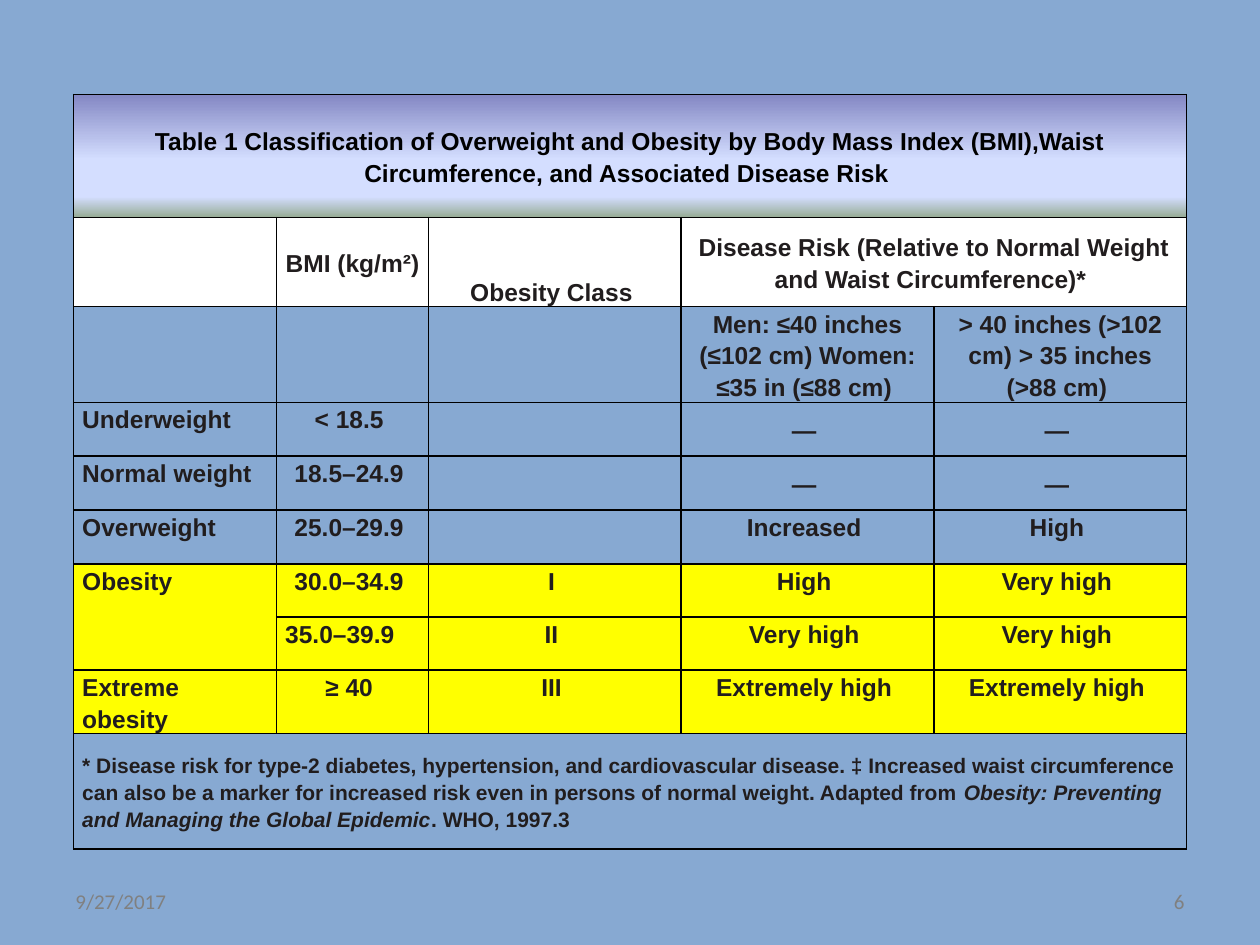
from lxml import etree
from pptx import Presentation
from pptx.dml.color import RGBColor
from pptx.enum import text
from pptx.oxml.ns import qn
from pptx.util import Pt

BLUE, YELLOW, WHITE = "87A9D2", "FFFF00", "FFFFFF"
BLACK, INK, GREY = "000000", "211D1E", "808080"
TITLE_STOPS = [(0, "8488C4"), (53, "D4DEFF"), (83, "D4DEFF"), (100, "96AB94")]

LEFT, CENTER, RIGHT = (text.PP_ALIGN.LEFT, text.PP_ALIGN.CENTER,
                       text.PP_ALIGN.RIGHT)
TOP, MIDDLE, BOTTOM = (text.MSO_ANCHOR.TOP, text.MSO_ANCHOR.MIDDLE,
                       text.MSO_ANCHOR.BOTTOM)

COL_WIDTHS = [116, 86.9, 144.4, 144.4, 144.4]
ROW_HEIGHTS = [70.4, 50.9, 54.6, 30.8, 30.8, 30.8, 30.4, 30.4, 30.4, 66]

TITLE = ("Table 1 Classification of Overweight and Obesity by Body Mass Index "
         "(BMI),Waist Circumference, and Associated Disease Risk ")
HEADINGS = [
    ["", "BMI (kg/m²) ", "Obesity Class ",
     "Disease Risk (Relative to Normal Weight and Waist Circumference)* ", ""],
    ["", "", "", "Men: ≤40 inches (≤102 cm) Women: ≤35 in (≤88 cm) ",
     "> 40 inches (>102 cm) > 35 inches (>88 cm) "],
]
CLASSES = [
    ["Underweight", "< 18.5 ", "", "— ", "— "],
    ["Normal weight", "18.5–24.9 ", "", "— ", "— "],
    ["Overweight", "25.0–29.9 ", "", "Increased ", "High "],
    ["Obesity", "30.0–34.9 ", "I ", "High ", "Very high "],
    ["", "35.0–39.9", "II ", "Very high ", "Very high "],
    ["Extreme obesity", "≥ 40 ", "III ", "Extremely high ", "Extremely high "],
]
NOTE = [
    ("* Disease risk for type-2 diabetes, hypertension, and cardiovascular "
     "disease. ‡ Increased waist circumference can also be a marker for "
     "increased risk even in persons of normal weight. Adapted from ", False),
    ("Obesity: Preventing and Managing the Global Epidemic", True),
    (". WHO, 1997.3", False),
]


def rgb(value):
    return RGBColor.from_string(value)


def add_run(p, content, size=14, color=INK, font="Arial", bold=True,
            italic=False):
    r = p.add_run()
    r.text = content
    r.font.size = Pt(size)
    r.font.bold = bold
    r.font.italic = italic
    r.font.color.rgb = rgb(color)
    if font:
        r.font.name = font


def add_solid(parent, color):
    fill = etree.SubElement(parent, qn("a:solidFill"))
    etree.SubElement(fill, qn("a:srgbClr"), val=color)


def set_borders(cell):
    tc_pr = cell._tc.get_or_add_tcPr()
    for side in "LRTB":
        ln = etree.SubElement(tc_pr, qn(f"a:ln{side}"), w=str(Pt(1)))
        add_solid(ln, BLACK)


def set_gradient(cell, stops):
    grad = etree.SubElement(cell._tc.get_or_add_tcPr(), qn("a:gradFill"))
    gs_list = etree.SubElement(grad, qn("a:gsLst"))
    for pos, color in stops:
        gs = etree.SubElement(gs_list, qn("a:gs"), pos=str(pos * 1000))
        etree.SubElement(gs, qn("a:srgbClr"), val=color)
    etree.SubElement(grad, qn("a:lin"), ang=str(90 * 60000), scaled="0")


def fill_cell(cell, runs, fill=None, align=CENTER, anchor=TOP, **fmt):
    """Write (text, italic) runs into a cell; fill is a colour or stops."""
    cell.margin_left = cell.margin_right = Pt(5)
    cell.margin_top = cell.margin_bottom = 0
    cell.vertical_anchor = anchor
    p = cell.text_frame.paragraphs[0]
    p.alignment = align
    p.line_spacing = 1.15
    for content, italic in runs:
        if content:
            add_run(p, content, italic=italic, **fmt)
    if isinstance(fill, list):
        set_gradient(cell, fill)
    elif fill:
        cell.fill.solid()
        cell.fill.fore_color.rgb = rgb(fill)
    else:
        cell.fill.background()


def add_risk_table(slide):
    frame = slide.shapes.add_table(
        len(ROW_HEIGHTS), len(COL_WIDTHS), Pt(42), Pt(54),
        Pt(sum(COL_WIDTHS)), Pt(sum(ROW_HEIGHTS)))
    table = frame.table
    table.first_row = table.horz_banding = False
    for column, width in zip(table.columns, COL_WIDTHS):
        column.width = Pt(width)
    for row, height in zip(table.rows, ROW_HEIGHTS):
        row.height = Pt(height)
    for cell in table.iter_cells():
        set_borders(cell)

    # Merged areas: title, risk heading, obesity label, footnote
    for first, last in [((0, 0), (0, 4)), ((1, 3), (1, 4)),
                        ((6, 0), (7, 0)), ((9, 0), (9, 4))]:
        table.cell(*first).merge(table.cell(*last))

    # Title and footnote
    fill_cell(table.cell(0, 0), [(TITLE, False)], TITLE_STOPS, anchor=MIDDLE,
              color=BLACK)
    fill_cell(table.cell(9, 0), NOTE, align=LEFT, anchor=MIDDLE, size=12)

    # Headings and weight classes
    for i, values in enumerate(HEADINGS + CLASSES, start=1):
        fill = WHITE if i == 1 else YELLOW if i >= 6 else None
        for j, value in enumerate(values):
            cell = table.cell(i, j)
            if cell.is_spanned:
                continue
            if i == 1:
                anchor = BOTTOM if j == 2 else MIDDLE
            else:
                anchor = MIDDLE if value == "— " else TOP
            left = j == 0 or value == "35.0–39.9"
            fill_cell(cell, [(value, False)], fill,
                      LEFT if left else CENTER, anchor)


def add_footer(slide, content, left, align):
    sp = slide.shapes.add_textbox(Pt(left), Pt(500.5), Pt(168), Pt(28.75))
    tf = sp.text_frame
    tf.word_wrap = True
    tf.vertical_anchor = MIDDLE
    p = tf.paragraphs[0]
    p.alignment = align
    add_run(p, content, size=12, color=GREY, font=None, bold=False)


def main():
    prs = Presentation()
    prs.slide_width, prs.slide_height = Pt(720), Pt(540)
    slide = prs.slides.add_slide(prs.slide_layouts[6])
    slide.background.fill.solid()
    slide.background.fill.fore_color.rgb = rgb(BLUE)

    add_risk_table(slide)

    # Date and slide number
    add_footer(slide, "9/27/2017", 36, LEFT)
    add_footer(slide, "6", 516, RIGHT)
    prs.save("out.pptx")


if __name__ == "__main__":
    main()
